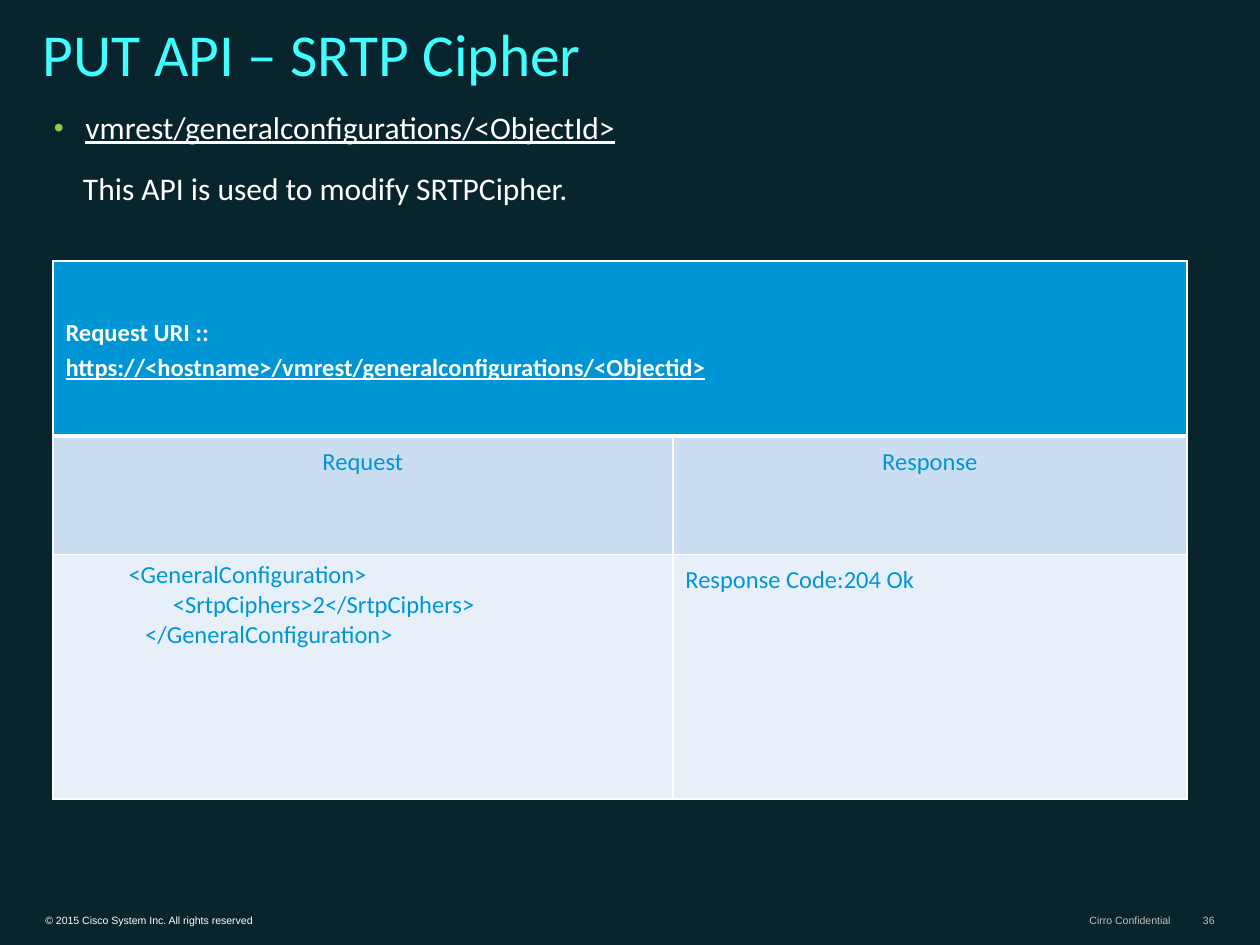
from lxml import etree
from pptx import Presentation
from pptx.dml.color import RGBColor
from pptx.enum import text
from pptx.oxml.ns import qn
from pptx.util import Inches, Pt

# Content
COLORS = {"background": "08252E", "title": "40FFFE", "white": "FFFFFF", "gray": "C0C0C0",
          "bullet": "96CA4B", "blue": "0096D6", "label": "CBDDF0", "body": "E7EFF8"}
ALIGN, ANCHOR = text.PP_ALIGN, text.MSO_ANCHOR
TITLE = "PUT API – SRTP Cipher"
ENDPOINT = "vmrest/generalconfigurations/<ObjectId>"
PURPOSE = "This API is used to modify SRTPCipher."
FOOTERS = [  # left, width, text, colour, alignment
    (0.27, 3.74, "© 2015 Cisco System Inc. All rights reserved", "white", ALIGN.LEFT),
    (8.49, 0.89, "Cirro Confidential", "gray", ALIGN.RIGHT),
    (9.45, 0.28, "36", "gray", ALIGN.RIGHT),
]
URI = ["Request URI ::", "https://<hostname>/vmrest/generalconfigurations/<Objectid>"]
REQUEST = ["<GeneralConfiguration>", "        <SrtpCiphers>2</SrtpCiphers>",
           "   </GeneralConfiguration>"]
ROWS = [  # height, fill, cells as lists of lines
    (1.39, "blue", [URI, []]),
    (0.94, "label", [["Request"], ["Response"]]),
    (1.94, "body", [REQUEST, ["Response Code:204 Ok"]]),
]
COLUMNS = [4.92, 4.08]


def color(name):
    return RGBColor.from_string(COLORS[name])


def style(paragraph, shade, size, name="Calibri", spacing=None, align=None, **font):
    for key, value in {"size": Pt(size), "name": name, **font}.items():
        setattr(paragraph.font, key, value)
    paragraph.font.color.rgb = color(shade)
    paragraph.line_spacing = spacing
    paragraph.alignment = align


def add_text(box, lines, wrap=True, anchor=ANCHOR.TOP, margins=(0.1, 0.05)):
    left, top, width, height = map(Inches, box)
    frame = slide.shapes.add_textbox(left, top, width, height).text_frame
    frame.word_wrap, frame.vertical_anchor = wrap, anchor
    frame.margin_left = frame.margin_right = Inches(margins[0])
    frame.margin_top = frame.margin_bottom = Inches(margins[1])
    frame.text = "\n".join(lines)
    return frame.paragraphs


def indent(paragraph, left, first=0):
    properties = paragraph._p.get_or_add_pPr()
    properties.set("marL", str(Inches(left)))
    properties.set("indent", str(Inches(first)))
    return properties


def add_bullet(paragraph):
    properties = indent(paragraph, 0.25, -0.25)
    shade = etree.SubElement(properties, qn("a:buClr"))
    etree.SubElement(shade, qn("a:srgbClr"), val=COLORS["bullet"])
    etree.SubElement(properties, qn("a:buSzPct"), val="90000")
    etree.SubElement(properties, qn("a:buFont"), typeface="Arial")
    etree.SubElement(properties, qn("a:buChar"), char="•")


def add_borders(cell, **widths):
    properties = cell._tc.get_or_add_tcPr()
    for side in "LRTB":
        line = etree.SubElement(properties, qn("a:ln" + side), w=str(Pt(widths.get(side, 1))))
        fill = etree.SubElement(line, qn("a:solidFill"))
        etree.SubElement(fill, qn("a:srgbClr"), val=COLORS["white"])


presentation = Presentation()
presentation.slide_width, presentation.slide_height = Inches(10), Inches(7.5)
slide = presentation.slides.add_slide(presentation.slide_layouts[6])
slide.background.fill.solid()
slide.background.fill.fore_color.rgb = color("background")

# Footer
for left, width, words, shade, align in FOOTERS:
    line, = add_text((left, 7.2, width, 0.19), [words], align == ALIGN.LEFT,
                     ANCHOR.BOTTOM, (0.09, 0.04))
    style(line, shade, 6, "Arial", align=align)

# Title and introduction
title, = add_text((0.25, -0.17, 9.39, 0.92), [TITLE], anchor=ANCHOR.BOTTOM, margins=(0.09, 0.05))
style(title, "title", 34, spacing=0.8)
endpoint, purpose = add_text((0.33, 0.83, 9.35, 1.25), [ENDPOINT, PURPOSE])
add_bullet(endpoint)
style(endpoint, "white", 18, spacing=0.95)
endpoint.runs[0].font.underline = True
indent(purpose, 0.23)
style(purpose, "white", 18, spacing=0.95)
purpose.space_before = Pt(14.4)

# Request and response table
table = slide.shapes.add_table(len(ROWS), len(COLUMNS), Inches(0.42), Inches(2.07),
                               Inches(sum(COLUMNS)), Inches(sum(row[0] for row in ROWS))).table
table.horz_banding = table.first_row = False
for column, width in zip(table.columns, COLUMNS):
    column.width = Inches(width)
table.cell(0, 0).merge(table.cell(0, 1))

for index, (height, fill, cells) in enumerate(ROWS):
    table.rows[index].height = Inches(height)
    header = index == 0
    for cell, lines in zip(table.rows[index].cells, cells):
        add_borders(cell, B=3 if header else 1, T=3 if index == 1 else 1)
        cell.fill.solid()
        cell.fill.fore_color.rgb = color(fill)
        cell.vertical_anchor = ANCHOR.MIDDLE if header else ANCHOR.TOP
        if not lines:
            continue
        cell.text = "\n".join(lines)
        for paragraph in cell.text_frame.paragraphs:
            if lines is REQUEST:
                indent(paragraph, 0.5)
            style(paragraph, "white" if header else "blue", 14, bold=header,
                  spacing=1.0 if lines is REQUEST else 1.15,
                  align=ALIGN.CENTER if index == 1 else ALIGN.LEFT)
table.cell(0, 0).text_frame.paragraphs[1].runs[0].font.underline = True

presentation.save("out.pptx")
